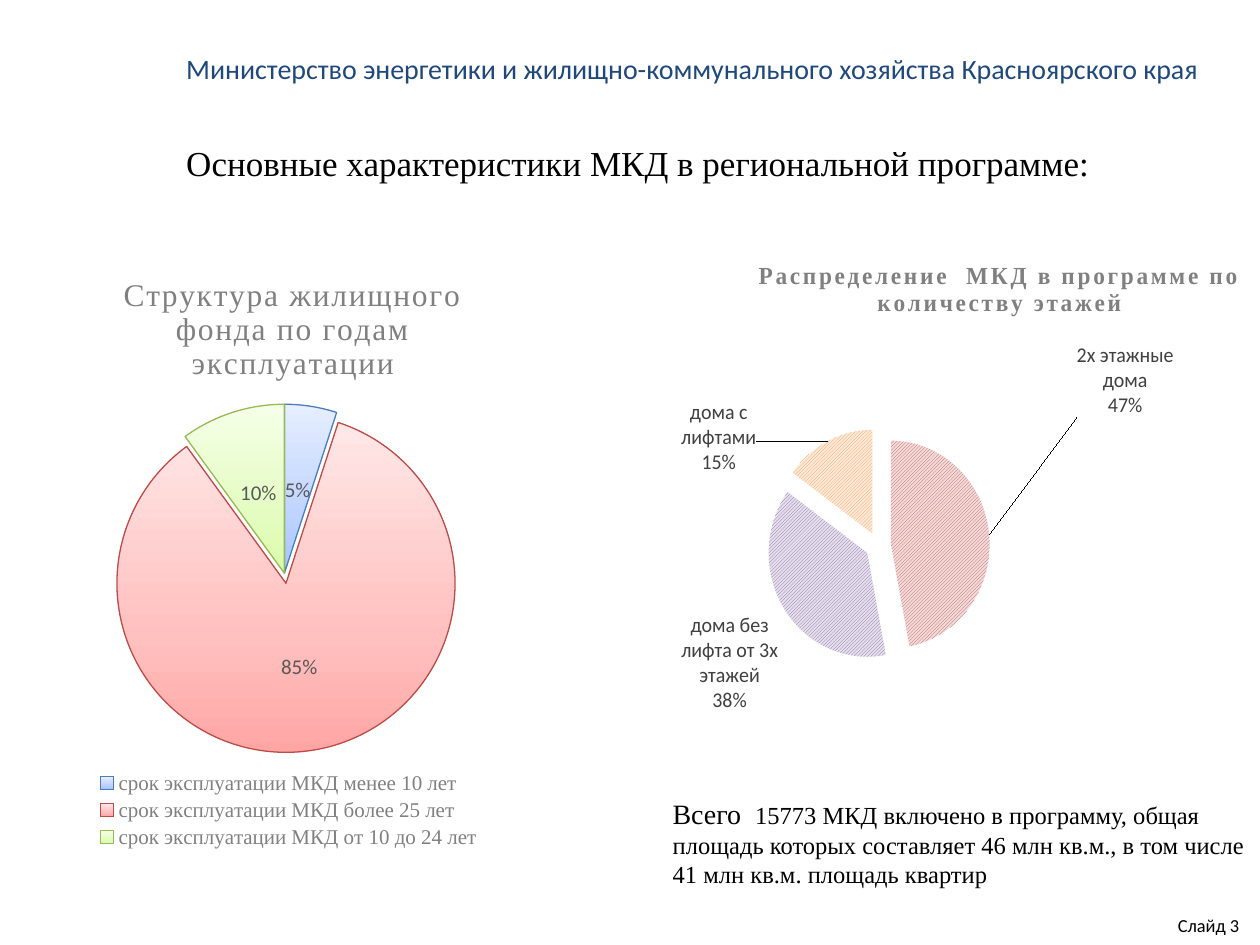
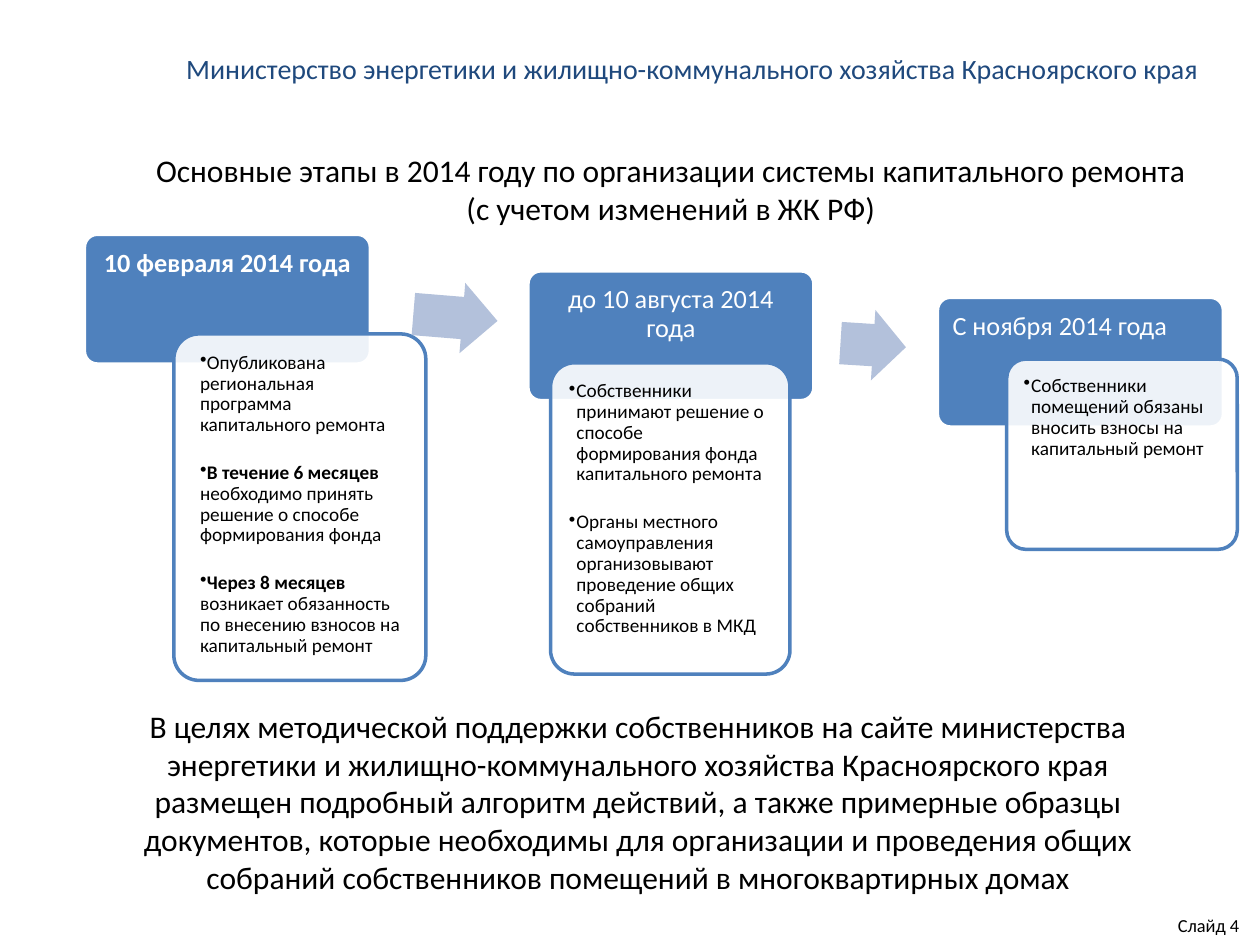
import copy

import lxml.etree
import pptx
import pptx.chart.data
import pptx.dml.color
import pptx.enum.chart
import pptx.enum.dml
import pptx.enum.shapes
import pptx.enum.text
import pptx.oxml.ns
import pptx.util

COLORS = {
    "ministry": "1F497D", "text": "000000", "white": "FFFFFF",
    "stage": "4F81BD", "arrow": "B3C1DB",
    "chart_title": "808080", "share": "595959", "floor_label": "404040",
}
SANS, SERIF = "Calibri", "Times New Roman"
COLUMNS, ROWS = 100, 75
CELL = pptx.util.Inches(0.1)
CENTER = pptx.enum.text.PP_ALIGN.CENTER
SHAPES = pptx.enum.shapes.MSO_SHAPE
LABELS = pptx.enum.chart.XL_LABEL_POSITION

qn = pptx.oxml.ns.qn


def rgb(color):
    return pptx.dml.color.RGBColor.from_string(COLORS.get(color, color))


def set_font(font, size, color="text", face=SANS, bold=False):
    font.size, font.name, font.bold = pptx.util.Pt(size), face, bold
    font.color.rgb = rgb(color)


def write(frame, paragraphs, align=None, line_spacing=None, gap=0, bullet_indent=None,
          spacing=0, **font):
    """Fill a text frame; a paragraph is a string or a list of (text, font changes)."""
    if isinstance(paragraphs, str):
        paragraphs = [paragraphs]
    for index, content in enumerate(paragraphs):
        paragraph = frame.add_paragraph() if index else frame.paragraphs[0]
        paragraph.alignment = align
        if line_spacing:
            paragraph.line_spacing = line_spacing
        if index and gap:
            paragraph.space_before = pptx.util.Pt(gap)
        if bullet_indent is not None:
            properties = paragraph._p.get_or_add_pPr()
            properties.set("marL", str(pptx.util.Inches(0.06)))
            properties.set("indent", str(pptx.util.Inches(bullet_indent)))
            add_xml(properties, "a:buChar", char="•")
        for text, changes in [(content, {})] if isinstance(content, str) else content:
            run = paragraph.add_run()
            run.text = text
            set_font(run.font, **{**font, **changes})
            if spacing:
                run._r.get_or_add_rPr().set("spc", str(spacing))


def add_xml(parent, tag, **attributes):
    child = lxml.etree.SubElement(parent, qn(tag))
    for key, value in attributes.items():
        child.set(key, str(value))
    return child


def layout(parent, after, edge=True, inner=False, **shares):
    """Place a chart part by shares of the chart, right behind the element given."""
    for old in parent.findall(qn("c:layout")):
        parent.remove(old)
    element = add_xml(parent, "c:layout")
    manual = add_xml(element, "c:manualLayout")
    if inner:
        add_xml(manual, "c:layoutTarget", val="inner")
    if edge:
        add_xml(manual, "c:xMode", val="edge")
        add_xml(manual, "c:yMode", val="edge")
    for key, value in shares.items():
        add_xml(manual, "c:" + key, val=value)
    if after is None:
        parent.insert(0, element)
    else:
        after.addnext(element)


def gradient_slice(style, outline, *colors):
    style.fill.gradient()
    style.fill.gradient_angle = 90
    first = style.fill.gradient_stops[0]._gs
    first.addnext(copy.deepcopy(first))
    for stop, position, color in zip(style.fill.gradient_stops, (0, 0.35, 1), colors):
        stop.position = position
        stop.color.rgb = rgb(color)
    style.line.color.rgb = rgb(outline)
    style.line.width = pptx.util.Pt(0.75)


def hatched_slice(style, stripes, ground):
    style.fill.patterned()
    style.fill.pattern = pptx.enum.dml.MSO_PATTERN.LIGHT_UPWARD_DIAGONAL
    style.fill.fore_color.rgb = rgb(stripes)
    style.fill.back_color.rgb = rgb(ground)
    style.line.fill.background()


class Deck:
    """Holds the presentation and the slide being filled; places are grid cells."""

    def __init__(self):
        self.presentation = pptx.Presentation()
        self.presentation.slide_width = COLUMNS * CELL
        self.presentation.slide_height = ROWS * CELL
        self.slide = None

    def cells(self, *place):
        return [round(length * CELL) for length in place]

    def new_slide(self, number):
        self.slide = self.presentation.slides.add_slide(self.presentation.slide_layouts[6])
        self.text((13.8, 3.6, 83.3, 3.7),
                  "Министерство энергетики и жилищно-коммунального хозяйства Красноярского края",
                  wrap=False, size=16, color="ministry")
        self.text((92.5, 72.1, 7.5, 2.8), f"Слайд {number}", size=10.5)

    def text(self, place, paragraphs, wrap=True, **style):
        frame = self.slide.shapes.add_textbox(*self.cells(*place)).text_frame
        frame.word_wrap = wrap
        write(frame, paragraphs, **style)

    def shape(self, kind, place, fill, line=None, opacity=None):
        shape = self.slide.shapes.add_shape(kind, *self.cells(*place))
        shape.shadow.inherit = False
        shape.fill.solid()
        shape.fill.fore_color.rgb = rgb(fill)
        if opacity:
            color = shape._element.spPr.find(qn("a:solidFill")).find(qn("a:srgbClr"))
            add_xml(color, "a:alpha", val=opacity * 1000)
        if line:
            shape.line.color.rgb = rgb(line)
            shape.line.width = pptx.util.Pt(2)
        else:
            shape.line.fill.background()
        return shape

    def card(self, place, paragraphs, fill, line, opacity=None, **style):
        card = self.shape(SHAPES.ROUNDED_RECTANGLE, place, fill, line, opacity)
        card.adjustments[0] = 0.1
        frame = card.text_frame
        frame.word_wrap = True
        frame.vertical_anchor = pptx.enum.text.MSO_ANCHOR.TOP
        frame.margin_left = frame.margin_right = pptx.util.Inches(0.09)
        frame.margin_top = frame.margin_bottom = pptx.util.Inches(0.09)
        write(frame, paragraphs, line_spacing=0.9, **style)

    def arrow(self, place, rotation):
        arrow = self.shape(SHAPES.RIGHT_ARROW, place, "arrow")
        arrow.adjustments[0], arrow.adjustments[1] = 0.6, 0.5
        arrow.rotation = rotation

    def pie(self, place, shares, title, title_style, title_at, pie_at, paint, paints,
            explosions, label_style, label_position, named=False, moved_labels=None,
            legend_at=None):
        data = pptx.chart.data.CategoryChartData()
        data.categories = list(shares)
        data.add_series("Series 1", list(shares.values()))
        chart = self.slide.shapes.add_chart(
            pptx.enum.chart.XL_CHART_TYPE.PIE, *self.cells(*place), data).chart
        set_font(chart.font, 10)

        chart.has_title = True
        write(chart.chart_title.text_frame, title, align=CENTER, color="chart_title",
              face=SERIF, **title_style)
        heading = chart.chart_title._element
        layout(heading, heading.find(qn("c:tx")), **title_at)
        layout(chart._chartSpace.chart.plotArea, None, inner=True, **pie_at)

        chart.has_legend = legend_at is not None
        if legend_at:
            legend = chart.legend
            legend.position = pptx.enum.chart.XL_LEGEND_POSITION.BOTTOM
            legend.include_in_layout = False
            set_font(legend.font, 12, "chart_title", SERIF)
            layout(legend._element, legend._element.find(qn("c:legendPos")), **legend_at)

        plot = chart.plots[0]
        plot.vary_by_categories = True
        series = plot.series[0]
        for index, (colors, explosion) in enumerate(zip(paints, explosions)):
            paint(series.points[index].format, *colors)
            if explosion:
                part = series._element.findall(qn("c:dPt"))[index]
                pulled = add_xml(part, "c:explosion", val=explosion)
                part.find(qn("c:spPr")).addprevious(pulled)
        self.pie_labels(series.data_labels, label_style, label_position, named,
                        moved_labels or {})

    def pie_labels(self, labels, style, position, named, moved):
        set_font(labels.font, **style)
        labels.number_format, labels.number_format_is_linked = "0%", False
        labels.position = position
        labels.show_value, labels.show_percentage = False, True
        labels.show_category_name = named
        common = labels._element
        if named:
            separator = add_xml(common, "c:separator")
            separator.text = "\n"
            common.find(qn("c:showBubbleSize")).addnext(separator)
        settings = [child for child in common if child.tag != qn("c:showLeaderLines")]
        for order, (index, (x, y)) in enumerate(moved.items()):
            label = add_xml(common, "c:dLbl")
            number = add_xml(label, "c:idx", val=index)
            layout(label, number, edge=False, x=x, y=y)
            label.extend(copy.deepcopy(setting) for setting in settings)
            common.insert(order, label)


def housing_slide(deck):
    deck.new_slide(3)
    deck.pie(
        (4.3, 19.4, 36.2, 48.8),
        {"срок эксплуатации МКД менее 10 лет": 5,
         "срок эксплуатации МКД более 25 лет": 85,
         "срок эксплуатации МКД от 10 до 24 лет": 10},
        "Структура жилищного фонда по годам эксплуатации",
        dict(size=18, spacing=100), dict(x=0.14, y=0.04),
        dict(x=0.13, y=0.26, w=0.75, h=0.55),
        gradient_slice,
        [("4A7EBB", "A4C4FF", "BFD4FF", "E6EEFF"),
         ("BE4B48", "FFA6A5", "FFC0BF", "FFE7E7"),
         ("98B954", "DAFDA7", "E4FCC2", "F5FFE7")],
        (0, 6, 0), dict(size=12, color="share"), LABELS.CENTER,
        legend_at=dict(x=0.08, y=0.85, w=0.87, h=0.14))
    deck.text((52.4, 62.7, 48.8, 8.4),
              [[("Всего  ", dict(size=16)),
                ("15773 МКД включено в программу, общая площадь которых составляет "
                 "46 млн кв.м., в том числе 41 млн кв.м. площадь квартир", {})]],
              size=14, face=SERIF)
    deck.pie(
        (47.1, 18.6, 51.7, 40.2),
        {"2х этажные дома": 47, "дома без лифта от 3х этажей": 38, "дома с лифтами": 15},
        "Распределение  МКД в программе по количеству этажей",
        dict(size=14, bold=True, spacing=150), dict(x=0.26, y=0.04),
        dict(x=0.3, y=0.41, w=0.32, h=0.41),
        hatched_slice,
        [("C0504D", "F2DCDB"), ("8064A2", "E6E0EC"), ("F79646", "FDEADA")],
        (13, 13, 13), dict(size=12, color="floor_label"), LABELS.OUTSIDE_END,
        named=True, moved_labels={0: (0.13, -0.23), 2: (-0.11, 0.08)})
    deck.text((13.8, 10.7, 74.4, 4.4), "Основные характеристики МКД в региональной программе:",
              wrap=False, size=20, face=SERIF)


def stages_slide(deck):
    deck.new_slide(4)
    strong = dict(bold=True)
    stages = [
        ((6.7, 18.6), "10 февраля 2014 года", dict(bold=True, align=CENTER),
         (13.8, 26.5, 20, 27.5), 0,
         ["Опубликована региональная программа капитального ремонта",
          [("В течение 6 месяцев ", strong),
           ("необходимо принять решение о способе формирования фонда", {})],
          [("Через 8 месяцев ", strong),
           ("возникает обязанность по внесению взносов на капитальный ремонт", {})]]),
        ((41.9, 21.5), "до 10 августа 2014 года", dict(align=CENTER),
         (43.7, 28.8, 19, 24.7), -0.06,
         ["Собственники принимают решение о способе формирования фонда капитального ремонта",
          "Органы местного самоуправления организовывают проведение общих собраний "
          "собственников в МКД"]),
        ((74.4, 23.6), "С ноября 2014 года", {},
         (79.9, 28.5, 18.3, 15.1), -0.06,
         ["Собственники помещений обязаны вносить взносы на капитальный ремонт"]),
    ]
    for corner, date, date_style, tasks_place, indent, tasks in stages:
        deck.card((*corner, 22.7, 10.3), date, "stage", "white",
                  size=15, color="white", **date_style)
        deck.card(tasks_place, tasks, "white", "stage", opacity=90,
                  size=11, gap=15.5, bullet_indent=indent)
    deck.arrow((32.8, 22.4, 6.7, 5.6), 4.7)
    deck.arrow((66.7, 24.6, 5.2, 5.6), 3.6)
    deck.text((8.3, 55.6, 84.7, 16.2),
              "В целях методической поддержки собственников на сайте министерства энергетики "
              "и жилищно-коммунального хозяйства Красноярского края размещен подробный "
              "алгоритм действий, а также примерные образцы документов, которые необходимы "
              "для организации и проведения общих собраний собственников помещений "
              "в многоквартирных домах", size=18, align=CENTER)
    deck.text((10.6, 11.5, 85.3, 7.1),
              ["Основные этапы в 2014 году по организации системы капитального ремонта",
               "(с учетом изменений в ЖК РФ)"], wrap=False, size=18, align=CENTER)


def main():
    deck = Deck()
    housing_slide(deck)
    stages_slide(deck)
    deck.presentation.save("out.pptx")


if __name__ == "__main__":
    main()
